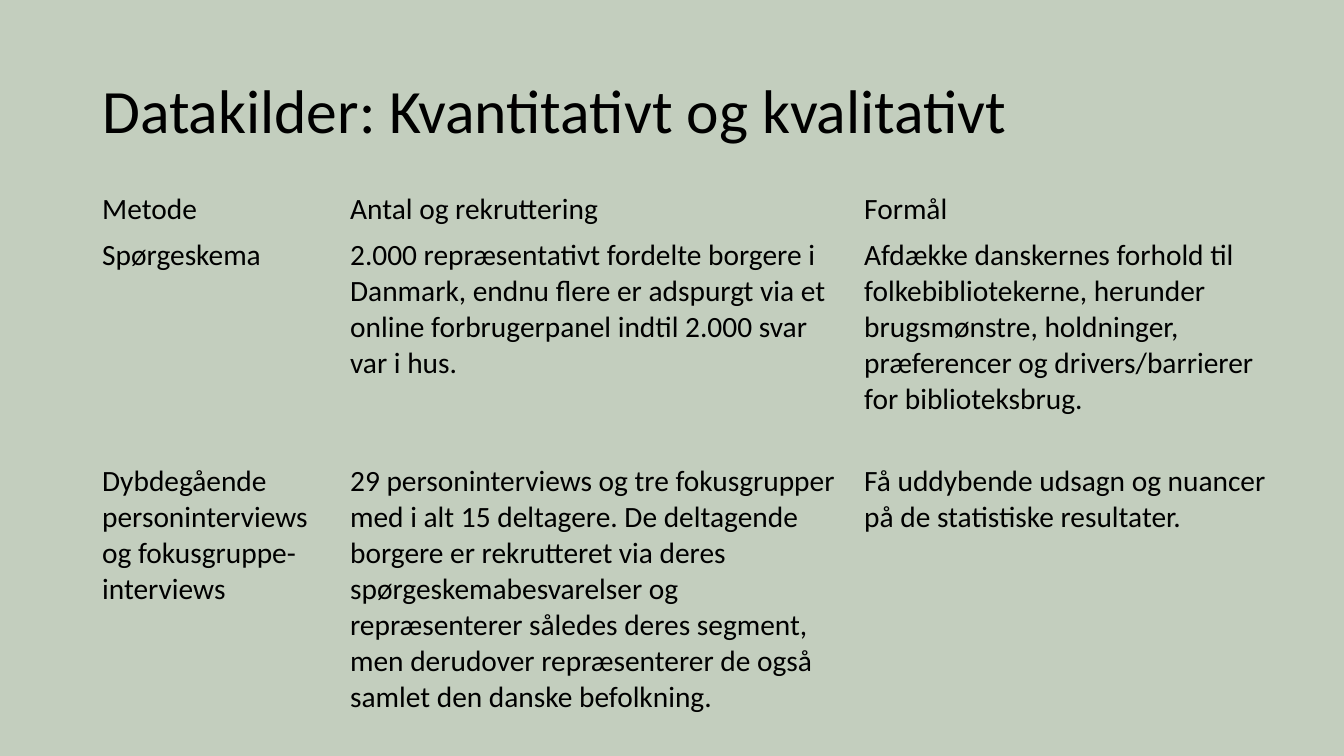
from pptx import Presentation
from pptx.dml.color import RGBColor
from pptx.enum.text import MSO_ANCHOR
from pptx.oxml.ns import qn
from pptx.util import Pt

SAGE = RGBColor(0xC3, 0xCE, 0xBE)
BLACK = RGBColor(0, 0, 0)
FONT = "Calibri"
PLAIN_TABLE_STYLE = "{2D5ABB26-0587-4C30-8999-92F81FD0307C}"

COLUMN_WIDTHS = [177.12, 367.2, 315.36]
ROW_HEIGHTS = [32.9, 161.3, 187]
DATA_SOURCES = [
    ["Metode", "Antal og rekruttering", "Formål"],
    [
        "Spørgeskema",
        "2.000 repræsentativt fordelte borgere i Danmark, endnu flere er adspurgt "
        "via et online forbrugerpanel indtil 2.000 svar var i hus.",
        "Afdække danskernes forhold til folkebibliotekerne, herunder brugsmønstre, "
        "holdninger, præferencer og drivers/barrierer for biblioteksbrug.",
    ],
    [
        "Dybdegående personinterviews og fokusgruppe-interviews",
        "29 personinterviews og tre fokusgrupper med i alt 15 deltagere. "
        "De deltagende borgere er rekrutteret via deres spørgeskemabesvarelser og "
        "repræsenterer således deres segment, men derudover repræsenterer de også "
        "samlet den danske befolkning.",
        "Få uddybende udsagn og nuancer på de statistiske resultater.",
    ],
]


def write_text(frame, text, size=21, color=BLACK, line_spacing=None):
    frame.word_wrap = True
    paragraph = frame.paragraphs[0]
    paragraph.line_spacing = line_spacing
    run = paragraph.add_run()
    run.text = text
    run.font.name = FONT
    run.font.size = Pt(size)
    run.font.color.rgb = color


def add_title(slide, text):
    title = slide.shapes.add_textbox(Pt(66), Pt(28.75), Pt(828), Pt(104.4))
    title.text_frame.vertical_anchor = MSO_ANCHOR.MIDDLE
    write_text(title.text_frame, text, size=44, line_spacing=0.9)


def add_source_table(slide, rows):
    frame = slide.shapes.add_table(
        len(rows), len(COLUMN_WIDTHS), Pt(65.8), Pt(133.2),
        Pt(sum(COLUMN_WIDTHS)), Pt(sum(ROW_HEIGHTS)),
    )
    sources = frame.table
    sources.first_row = False
    sources.horz_banding = False
    next(frame.element.iter(qn("a:tableStyleId"))).text = PLAIN_TABLE_STYLE
    for column, width in zip(sources.columns, COLUMN_WIDTHS):
        column.width = Pt(width)
    for row, height, texts in zip(sources.rows, ROW_HEIGHTS, rows):
        row.height = Pt(height)
        for cell, text in zip(row.cells, texts):
            cell.fill.background()
            write_text(cell.text_frame, text)


def main():
    presentation = Presentation()
    presentation.slide_width = Pt(960)
    presentation.slide_height = Pt(540)
    slide = presentation.slides.add_slide(presentation.slide_layouts[6])
    slide.background.fill.solid()
    slide.background.fill.fore_color.rgb = SAGE
    add_title(slide, "Datakilder: Kvantitativt og kvalitativt")
    add_source_table(slide, DATA_SOURCES)
    presentation.save("out.pptx")


if __name__ == "__main__":
    main()
